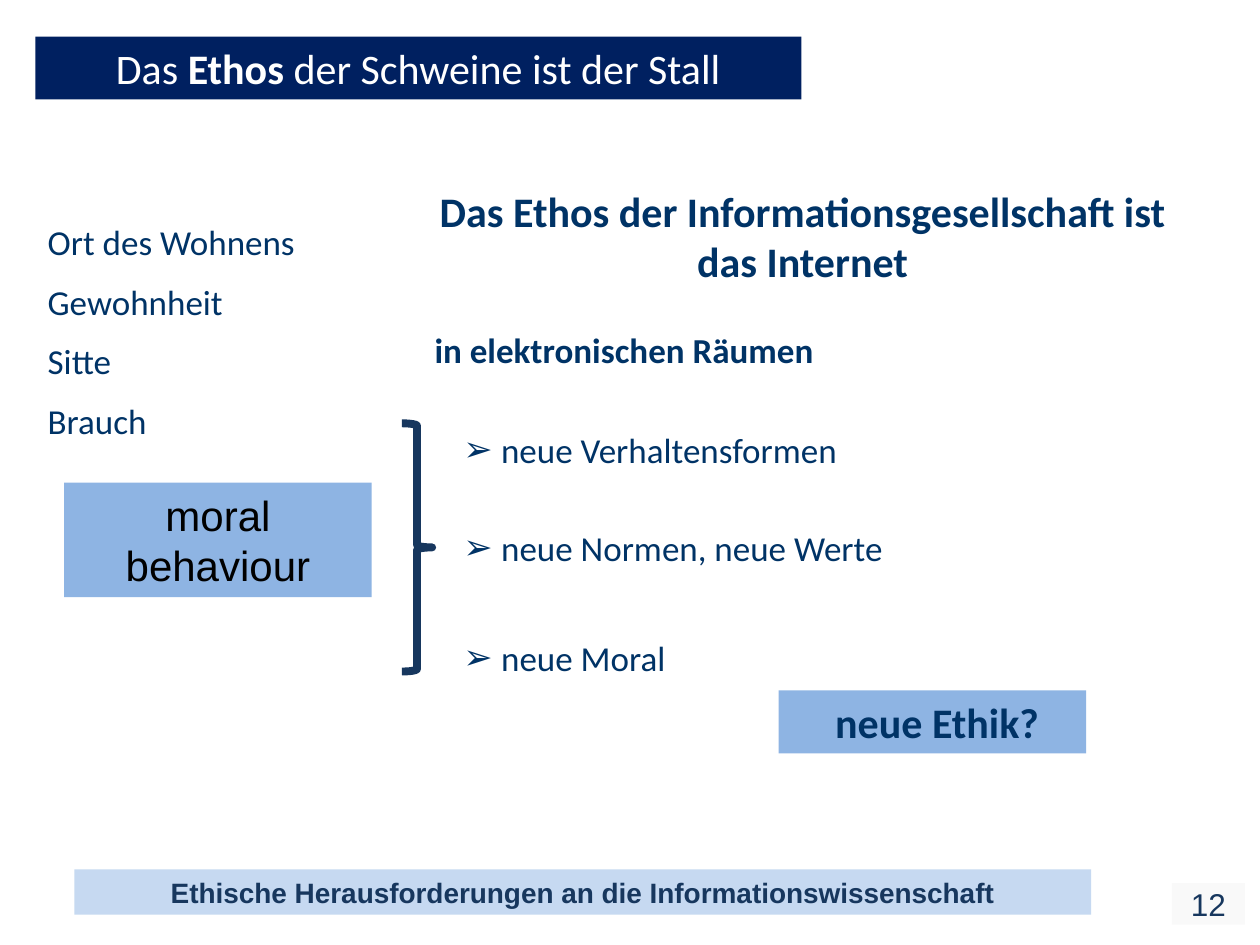
"""Build the slide on the ethos of the information society."""
from dataclasses import dataclass
from typing import Optional

from lxml import etree
from pptx import Presentation
from pptx import util as u
from pptx.dml.color import RGBColor
from pptx.enum import shapes, text
from pptx.oxml import ns

NAVY = RGBColor(0x00, 0x20, 0x60)
INK = RGBColor(0x00, 0x33, 0x66)
STEEL = RGBColor(0x17, 0x37, 0x5E)
SKY = RGBColor(0x8E, 0xB4, 0xE3)
PALE = RGBColor(0xC6, 0xD9, 0xF1)
MIST = RGBColor(0xF9, 0xF9, 0xF9)
WHITE = RGBColor(0xFF, 0xFF, 0xFF)
BLACK = RGBColor(0x00, 0x00, 0x00)

LEFT, CENTER = text.PP_ALIGN.LEFT, text.PP_ALIGN.CENTER
TOP, MIDDLE = text.MSO_ANCHOR.TOP, text.MSO_ANCHOR.MIDDLE
GROW, FIXED = text.MSO_AUTO_SIZE.SHAPE_TO_FIT_TEXT, text.MSO_AUTO_SIZE.NONE
BULLET_INDENT = u.Pt(17)

Box = tuple[float, float, float, float]
Run = tuple[str, bool]


@dataclass(frozen=True)
class Label:
    """Wording, place and format of one piece of text."""
    runs: tuple[Run, ...]
    box: Box
    size: float = 20
    color: RGBColor = INK
    fill: Optional[RGBColor] = None
    face: str = "Calibri"
    align: text.PP_ALIGN = LEFT
    anchor: text.MSO_ANCHOR = TOP
    grow: bool = True
    wrap: bool = True
    inset: Optional[float] = None
    bullet: str = ""


def points(box: Box) -> list[u.Pt]:
    """Turn a box into lengths."""
    return [u.Pt(length) for length in box]


def apply(target: object, values: dict[str, object]) -> None:
    """Set each named attribute on the target."""
    for name, value in values.items():
        setattr(target, name, value)


def add_bullet(paragraph, sign: str) -> None:
    """Give the paragraph a bullet with a hanging indent."""
    properties = paragraph._p.get_or_add_pPr()
    properties.set("marL", str(BULLET_INDENT))
    properties.set("indent", str(-BULLET_INDENT))
    etree.SubElement(properties, ns.qn("a:buFont")).set("typeface", "Arial")
    etree.SubElement(properties, ns.qn("a:buChar")).set("char", sign)


def add_label(slide, label: Label) -> None:
    """Draw a label as a text box or as a filled rectangle."""
    if label.fill is None:
        holder = slide.shapes.add_textbox(*points(label.box))
    else:
        holder = slide.shapes.add_shape(
            shapes.MSO_SHAPE.RECTANGLE, *points(label.box))
        holder.shadow.inherit = False
        holder.fill.solid()
        holder.fill.fore_color.rgb = label.fill
        holder.line.fill.background()
    frame = holder.text_frame
    apply(frame, {"word_wrap": label.wrap, "vertical_anchor": label.anchor,
                  "auto_size": GROW if label.grow else FIXED})
    if label.inset is not None:
        sides = ("left", "top", "right", "bottom")
        apply(frame, {f"margin_{side}": u.Pt(label.inset) for side in sides})
    paragraph = frame.paragraphs[0]
    paragraph.alignment = label.align
    if label.bullet:
        add_bullet(paragraph, label.bullet)
    for wording, bold in label.runs:
        run = paragraph.add_run()
        run.text = wording
        apply(run.font, {"size": u.Pt(label.size), "name": label.face,
                         "bold": bold})
        run.font.color.rgb = label.color


def add_brace(slide, box: Box) -> None:
    """Draw the brace that joins behaviour to its new forms."""
    brace = slide.shapes.add_shape(
        shapes.MSO_SHAPE.RIGHT_BRACE, *points(box))
    brace.shadow.inherit = False
    brace.fill.background()
    brace.line.color.rgb = STEEL
    brace.line.width = u.Pt(4.5)


FOOTER = Label((("Ethische Herausforderungen an die Informationswissenschaft", True),),
               (42.48, 496.8, 581.04, 25.92), 16, STEEL, PALE, "Arial",
               CENTER, MIDDLE, grow=False, inset=0)
PAGE_NUMBER = Label((("12", False),), (669.6, 504.72, 41.76, 23.76), 18, STEEL,
                    MIST, "Arial", CENTER, MIDDLE, grow=False, wrap=False)
TITLE = Label((("Das ", False), ("Ethos", True),
               (" der Schweine ist der Stall", False)),
              (20.16, 20.88, 437.76, 36), 24, WHITE, NAVY, align=CENTER)
THESIS = Label((("Das Ethos der Informationsgesellschaft ist das Internet", True),),
               (239.76, 102.24, 437.76, 65.5), 24, align=CENTER)
SPACES = Label((("in elektronischen Räumen", True),),
               (241.2, 184.32, 437.76, 31.5))
NEW_FORMS = [
    Label(((f" {wording}", False),), (257.76, top, width, 31.5), bullet="➢")
    for wording, top, width in (("neue Verhaltensformen", 241.2, 244),
                                ("neue Normen, neue Werte", 297.4, 306),
                                ("neue Moral", 360, 192))]
NEW_ETHICS = Label(((" ", False), ("neue Ethik?", True)),
                   (444.96, 394.56, 175.68, 36), 24, fill=SKY, align=CENTER)
MEANINGS = [
    Label(((wording, False),), (20.16, 122.4 + 34.1 * row, 164.16, 31.5))
    for row, wording in enumerate(
        ("Ort des Wohnens", "Gewohnheit", "Sitte", "Brauch"))]
BEHAVIOUR = Label((("moral behaviour", False),), (36.72, 275.76, 175.68, 65.5),
                  24, BLACK, SKY, "Arial", CENTER, MIDDLE)


def main() -> None:
    """Build and save the slide."""
    deck = Presentation()
    apply(deck, {"slide_width": u.Pt(720), "slide_height": u.Pt(540)})
    slide = deck.slides.add_slide(deck.slide_layouts[6])
    for label in (FOOTER, PAGE_NUMBER, TITLE, THESIS, SPACES, *NEW_FORMS,
                  NEW_ETHICS, *MEANINGS, BEHAVIOUR):
        add_label(slide, label)
    add_brace(slide, (229.68, 241.92, 17.28, 141.84))
    deck.save("out.pptx")


if __name__ == "__main__":
    main()
